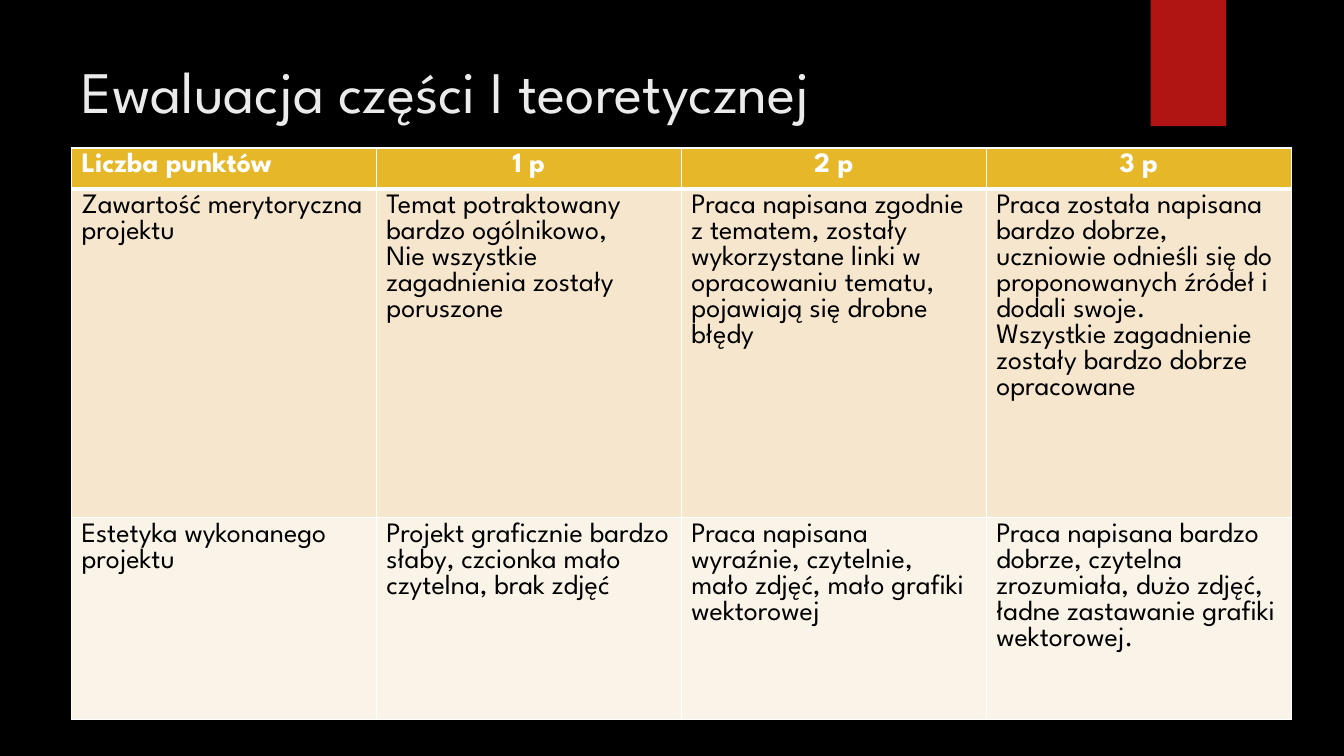
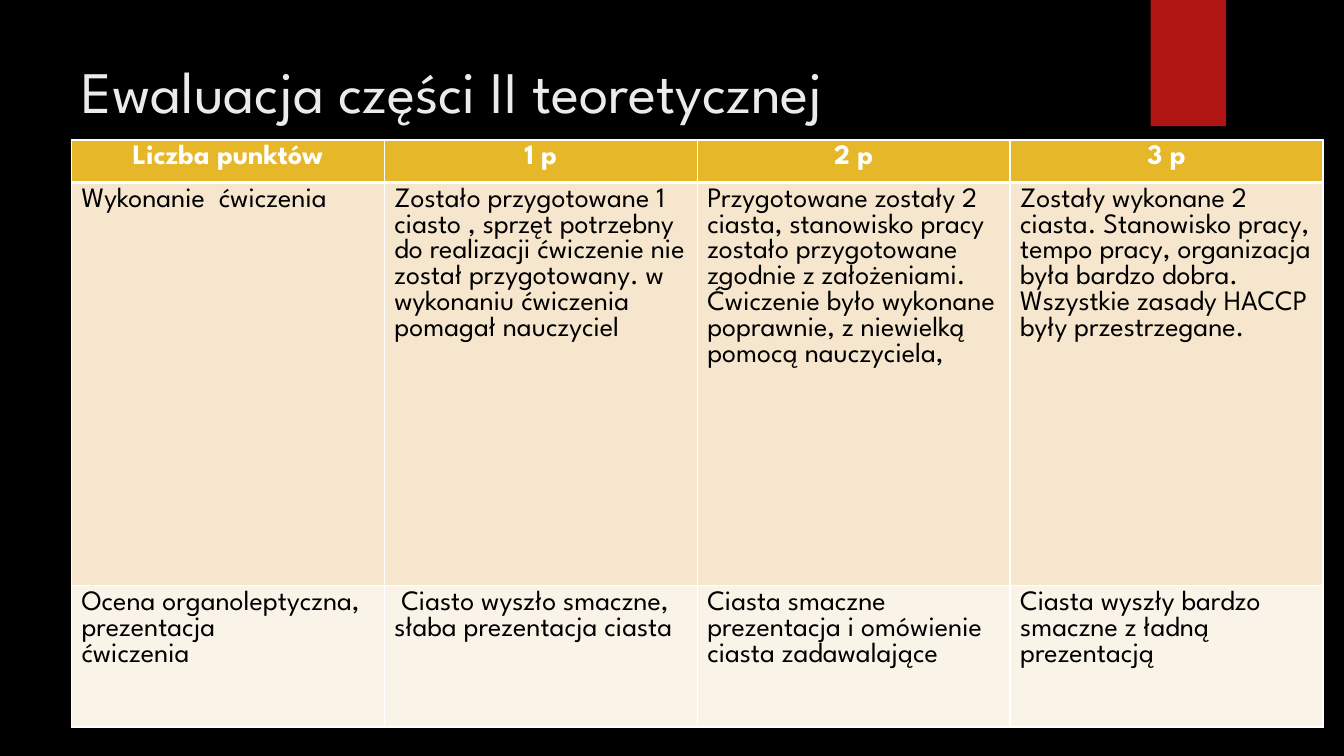
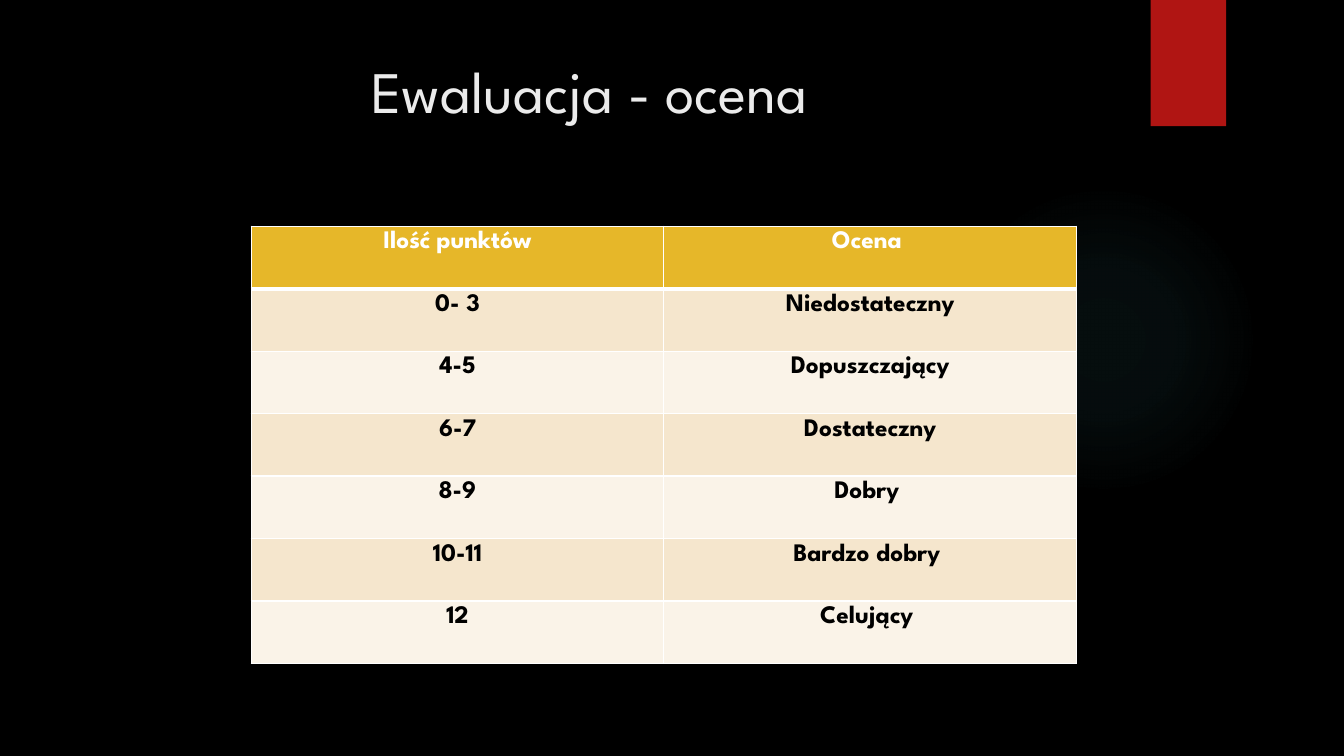
from pptx import Presentation
from pptx import util as u
from pptx.dml.color import RGBColor
from pptx.enum import shapes, text
from pptx.oxml import parse_xml
from pptx.oxml.ns import nsdecls, qn

Cm, Pt = u.Cm, u.Pt
LEFT, MID = text.PP_ALIGN.LEFT, text.PP_ALIGN.CENTER
FONT = "League Spartan"
BLACK, WHITE, PALE = "000000", "FFFFFF", "EBEBEB"
RED, GOLD, TEAL = "B01513", "E6B729", "50B9C1"
BANDS = ("F5E6CD", "FAF3E8")


def color(code):
    return RGBColor.from_string(code)


def write(frame, words, size=20, ink=BLACK, bold=False, align=LEFT):
    """Fill a text frame; each line of words becomes a paragraph."""
    frame.word_wrap = True
    for i, line in enumerate(words.split("\n")):
        para = frame.paragraphs[0] if i == 0 else frame.add_paragraph()
        para.alignment = align
        run = para.add_run()
        run.text = line
        font = run.font
        font.name, font.size, font.bold = FONT, Pt(size), bold
        font.color.rgb = color(ink)


def edge(cell, top=1, bottom=1):
    """Draw white cell borders; widths are in points."""
    props = cell._tc.get_or_add_tcPr()
    for side, width in zip("LRTB", (1, 1, top, bottom)):
        props.append(parse_xml(
            f'<a:ln{side} {nsdecls("a")} w="{Pt(width)}"><a:solidFill>'
            f'<a:srgbClr val="{WHITE}"/></a:solidFill></a:ln{side}>'))


class Deck:
    def __init__(self):
        self.prs = Presentation()
        self.prs.slide_width, self.prs.slide_height = Cm(33.87), Cm(19.05)
        self.base = self.prs.slide_layouts[5]
        fill = self.base.background.fill
        fill.solid()
        fill.fore_color.rgb = color(BLACK)
        self.slide = None

    def start(self, title, align=LEFT):
        first = self.slide is None
        self.slide = self.prs.slides.add_slide(self.base)
        if first:
            self.glow()
            self.ribbon()
        box = self.slide.shapes.title
        box.left, box.top, box.width, box.height = Cm(1.8), Cm(1.27), Cm(26.11), Cm(2.3)
        frame = box.text_frame
        frame.auto_size = text.MSO_AUTO_SIZE.NONE
        frame.vertical_anchor = text.MSO_ANCHOR.TOP
        frame.margin_top = Cm(0.1)
        write(frame, title, size=42, ink=PALE, align=align)

    def shape(self, kind, x, y, w, h):
        """Make a plain shape and move it to the layout all slides share."""
        item = self.slide.shapes.add_shape(kind, Cm(x), Cm(y), Cm(w), Cm(h))
        item.shadow.inherit = False
        item.line.fill.background()
        self.base.element.cSld.spTree.append(item.element)
        return item

    def glow(self):
        disc = self.shape(shapes.MSO_SHAPE.OVAL, 23.9, 4.65, 7.82, 7.82)
        disc.fill.background()
        stops = "".join(
            f'<a:gs pos="{pos * 1000}"><a:srgbClr val="{TEAL}">'
            f'<a:alpha val="{alpha * 1000}"/></a:srgbClr></a:gs>'
            for pos, alpha in ((0, 7), (36, 6), (69, 0), (100, 0)))
        grad = parse_xml(
            f'<a:gradFill {nsdecls("a")}><a:gsLst>{stops}</a:gsLst><a:path path="circle">'
            '<a:fillToRect l="50000" t="50000" r="50000" b="50000"/></a:path></a:gradFill>')
        props = disc.element.spPr
        props.replace(props.find(qn("a:noFill")), grad)

    def ribbon(self):
        bar = self.shape(shapes.MSO_SHAPE.RECTANGLE, 29, 0, 1.9, 3.18)
        bar.fill.solid()
        bar.fill.fore_color.rgb = color(RED)

    def table(self, x, y, width, highs, rows, size=20, bold=False, align=LEFT, corner=MID):
        """Add a table; bold and align format the body, corner aligns the first cell."""
        cols = len(rows[0])
        grid = self.slide.shapes.add_table(
            len(rows), cols, Cm(x), Cm(y), Cm(width), Cm(sum(highs))).table
        grid.first_row = grid.horz_banding = False
        for col in grid.columns:
            col.width = Cm(width / cols)
        for r, row in enumerate(rows):
            grid.rows[r].height = Cm(highs[r])
            head = r == 0
            for c, words in enumerate(row):
                cell = grid.cell(r, c)
                edge(cell, top=3 if r == 1 else 1, bottom=3 if head else 1)
                cell.fill.solid()
                cell.fill.fore_color.rgb = color(GOLD if head else BANDS[(r - 1) % 2])
                place = align if not head else corner if c == 0 else MID
                write(cell.text_frame, words, size=size, ink=WHITE if head else BLACK,
                      bold=head or bold, align=place)


HEAD = ("Liczba punktów", "1 p", "2 p", "3 p")
THEORY = (
    HEAD,
    ("Zawartość merytoryczna projektu",
     "Temat potraktowany bardzo ogólnikowo,\nNie wszystkie zagadnienia zostały poruszone",
     "Praca napisana zgodnie z tematem, zostały wykorzystane linki w opracowaniu tematu, "
     "pojawiają się drobne błędy",
     "Praca została napisana bardzo dobrze, uczniowie odnieśli się do proponowanych źródeł "
     "i dodali swoje.\nWszystkie zagadnienie zostały bardzo dobrze opracowane"),
    ("Estetyka wykonanego projektu",
     "Projekt graficznie bardzo słaby, czcionka mało czytelna, brak zdjęć",
     "Praca napisana wyraźnie, czytelnie, mało zdjęć, mało grafiki wektorowej",
     "Praca napisana bardzo dobrze, czytelna zrozumiała, dużo zdjęć, ładne zastawanie "
     "grafiki wektorowej."),
)
BAKING = (
    HEAD,
    ("Wykonanie  ćwiczenia",
     "Zostało przygotowane 1 ciasto , sprzęt potrzebny do realizacji ćwiczenie nie został "
     "przygotowany. w wykonaniu ćwiczenia pomagał nauczyciel",
     "Przygotowane zostały 2 ciasta, stanowisko pracy zostało przygotowane zgodnie z "
     "założeniami. Ćwiczenie było wykonane poprawnie, z niewielką pomocą nauczyciela,",
     "Zostały wykonane 2 ciasta. Stanowisko pracy, tempo pracy, organizacja była bardzo "
     "dobra. Wszystkie zasady HACCP były przestrzegane."),
    ("Ocena organoleptyczna,\nprezentacja\nćwiczenia",
     " Ciasto wyszło smaczne, słaba prezentacja ciasta",
     "Ciasta smaczne prezentacja i omówienie ciasta zadawalające",
     "Ciasta wyszły bardzo smaczne z ładną prezentacją"),
)
GRADES = (
    ("Ilość punktów", "Ocena "),
    ("0- 3", "Niedostateczny"),
    ("4-5", "Dopuszczający"),
    ("6-7", "Dostateczny"),
    ("8-9", "Dobry "),
    ("10-11", "Bardzo dobry "),
    ("12", "Celujący "),
)


def main():
    deck = Deck()
    deck.start("Ewaluacja części I teoretycznej")
    deck.table(1.8, 3.73, 30.74, (1.04, 8.28, 5.08), THEORY, corner=LEFT)
    deck.start("Ewaluacja części II teoretycznej")
    deck.table(1.8, 3.53, 31.54, (1.07, 10.16, 3.56), BAKING)
    deck.start("Ewaluacja - ocena", align=MID)
    count = len(GRADES)
    deck.table(6.33, 5.7, 20.8, (11.02 / count,) * count, GRADES,
               size=18, bold=True, align=MID)
    deck.prs.save("out.pptx")


if __name__ == "__main__":
    main()
